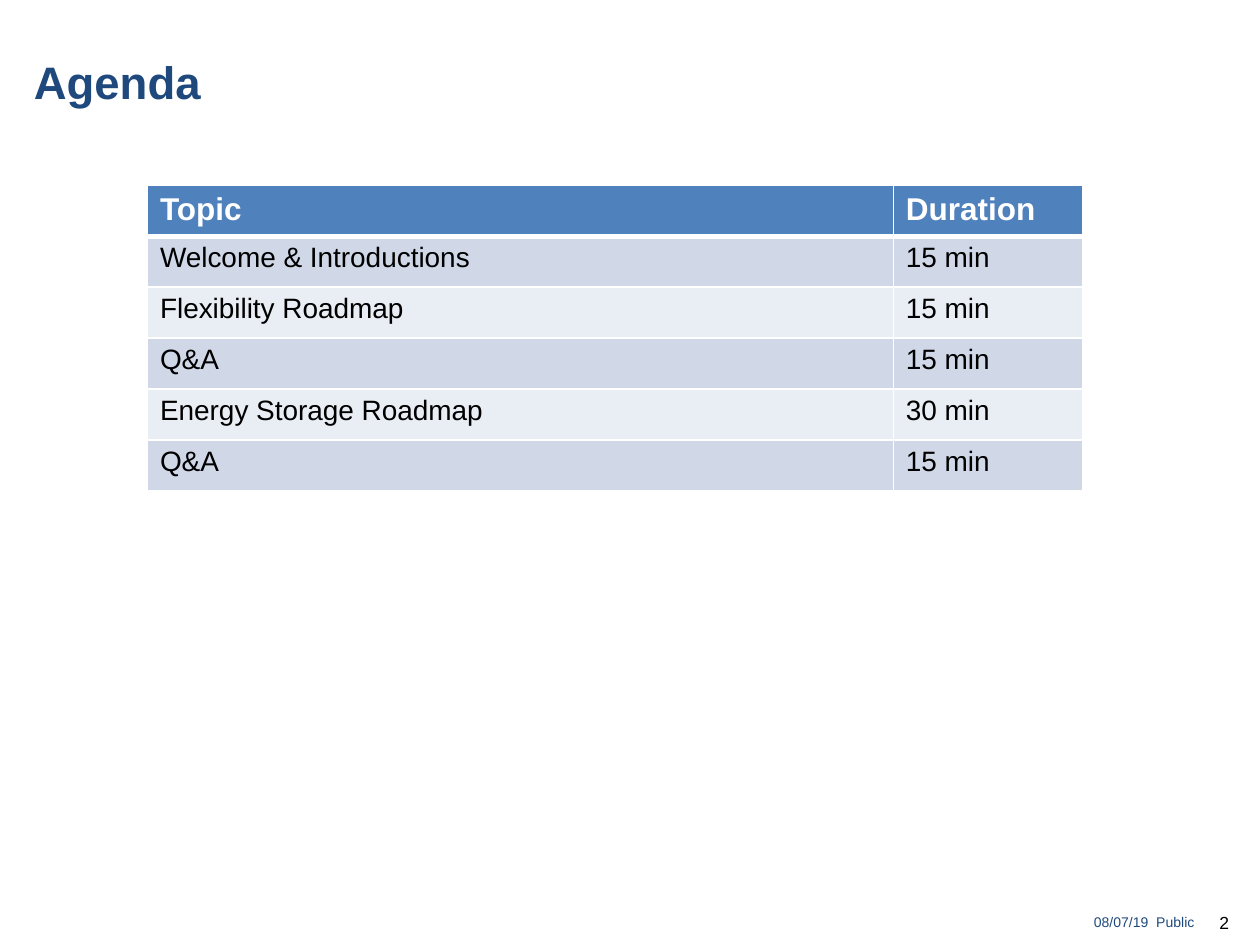
from lxml import etree
from pptx import Presentation
from pptx import util as u
from pptx.dml.color import RGBColor
from pptx.enum import text
from pptx.oxml import ns

NAVY = RGBColor(0x1F, 0x49, 0x7D)
BLUE = RGBColor(0x4F, 0x81, 0xBD)
BAND_DARK = RGBColor(0xD0, 0xD8, 0xE8)
BAND_LIGHT = RGBColor(0xE9, 0xED, 0xF4)
WHITE = RGBColor(0xFF, 0xFF, 0xFF)
BLACK = RGBColor(0, 0, 0)

AGENDA = [
    ("Topic", "Duration"),
    ("Welcome & Introductions", "15 min"),
    ("Flexibility Roadmap", "15 min"),
    ("Q&A", "15 min"),
    ("Energy Storage Roadmap", "30 min"),
    ("Q&A", "15 min"),
]
COLUMN_WIDTHS = (5.92, 1.5)
HEADING = {"size": u.Pt(18), "bold": True, "color": WHITE}
ENTRY = {"size": u.Pt(16), "bold": False, "color": BLACK}


def format_font(font, color, **values):
    """Apply Arial, a colour and further format values to a font."""
    for key, value in {"name": "Arial", **values}.items():
        setattr(font, key, value)
    font.color.rgb = color


def add_label(slide, wording, box, look, anchor=text.MSO_ANCHOR.TOP, align=text.PP_ALIGN.LEFT):
    """Add one line of text in a box given in inches."""
    frame = slide.shapes.add_textbox(*map(u.Inches, box)).text_frame
    frame.word_wrap = True
    frame.vertical_anchor = anchor
    line = frame.paragraphs[0]
    line.text = wording
    line.alignment = align
    format_font(line.font, **look)


def add_borders(cell, widths):
    """Draw white borders whose point widths are keyed by side."""
    properties = cell._tc.get_or_add_tcPr()
    for side, width in widths.items():
        border = etree.SubElement(properties, ns.qn(f"a:ln{side}"), w=str(u.Pt(width)))
        fill = etree.SubElement(border, ns.qn("a:solidFill"))
        etree.SubElement(fill, ns.qn("a:srgbClr"), val=str(WHITE))


def fill_cell(cell, wording, row):
    """Write and style one agenda cell according to its row."""
    add_borders(cell, {"L": 1, "R": 1, "T": 3 if row == 1 else 1, "B": 3 if row == 0 else 1})
    cell.fill.solid()
    cell.fill.fore_color.rgb = BLUE if row == 0 else BAND_DARK if row % 2 else BAND_LIGHT
    cell.text = wording
    format_font(cell.text_frame.paragraphs[0].font, **(ENTRY if row else HEADING))


def add_agenda(slide):
    """Add the table of topics and durations."""
    box = map(u.Inches, (1.17, 1.47, sum(COLUMN_WIDTHS), 2.43))
    agenda = slide.shapes.add_table(len(AGENDA), len(COLUMN_WIDTHS), *box).table
    for column, width in zip(agenda.columns, COLUMN_WIDTHS):
        column.width = u.Inches(width)
    for row, entries in enumerate(AGENDA):
        for column, wording in enumerate(entries):
            fill_cell(agenda.cell(row, column), wording, row)


def main():
    """Build the agenda slide and save it."""
    deck = Presentation()
    deck.slide_width, deck.slide_height = u.Inches(10), u.Inches(7.5)
    slide = deck.slides.add_slide(deck.slide_layouts[6])
    add_label(slide, "Agenda", (0.17, 0.27, 7.33, 0.75),
              {"size": u.Pt(26), "bold": True, "color": NAVY}, text.MSO_ANCHOR.MIDDLE)
    add_label(slide, "08/07/19  Public", (7.25, 7.08, 2.33, 0.35),
              {"size": u.Pt(8), "color": NAVY}, text.MSO_ANCHOR.BOTTOM, text.PP_ALIGN.RIGHT)
    add_label(slide, "2", (9.58, 7.19, 0.42, 0.31), {"size": u.Pt(10), "color": BLACK})
    add_agenda(slide)
    deck.save("out.pptx")


if __name__ == "__main__":
    main()
